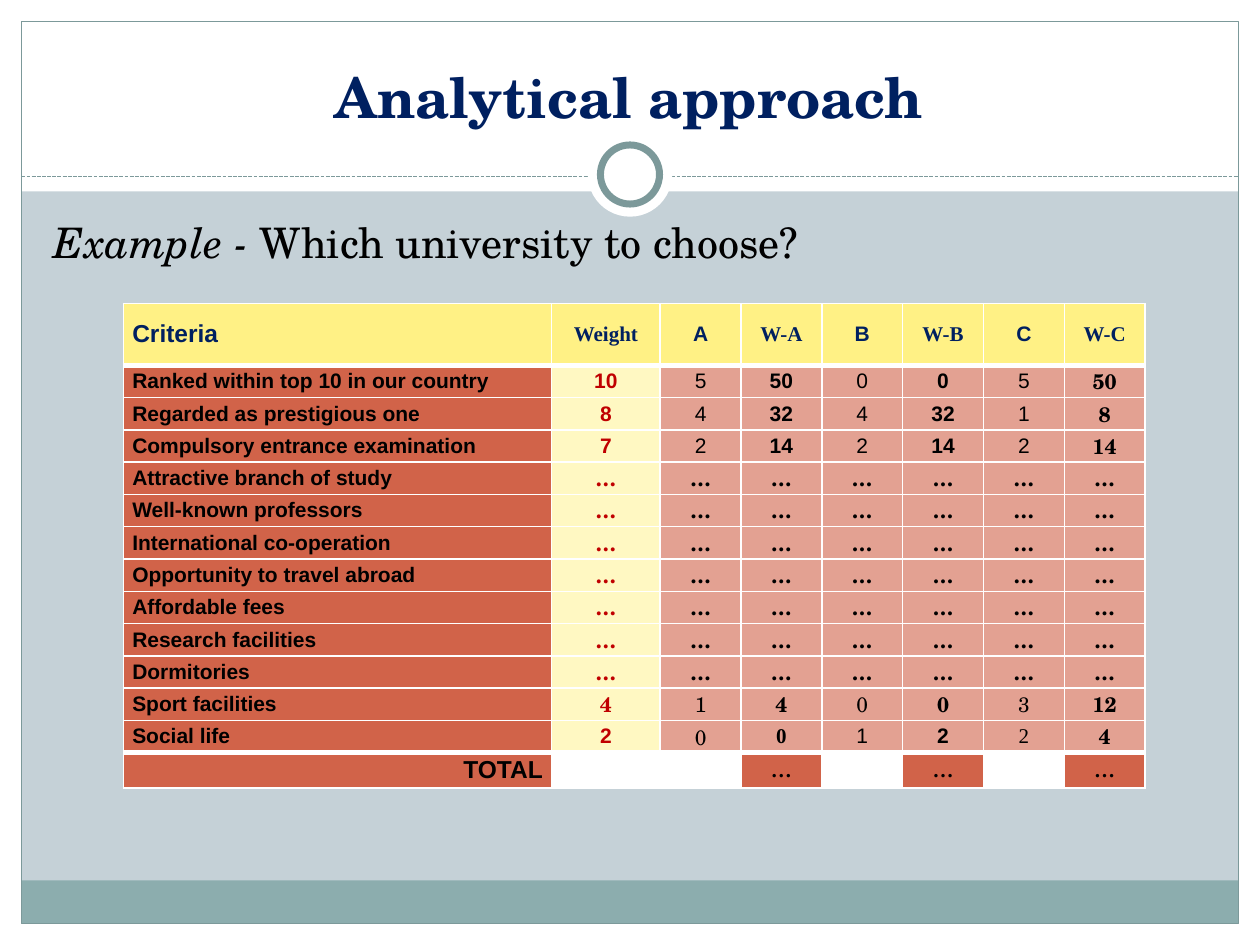
import pptx
import pptx.dml.color
import pptx.enum.dml
import pptx.enum.shapes
import pptx.enum.text
import pptx.oxml
import pptx.oxml.ns
import pptx.util
from lxml import etree

Pt = pptx.util.Pt
SHAPE = pptx.enum.shapes.MSO_SHAPE
ALIGN = pptx.enum.text.PP_ALIGN
ANCHOR = pptx.enum.text.MSO_ANCHOR
qn = pptx.oxml.ns.qn

WIDTH, HEIGHT = pptx.util.Inches(10), pptx.util.Inches(7.5)
SERIF, SANS, TIMES = "TeX Gyre Schola", "Arial", "Times New Roman"
WHITE, BLACK, NAVY, RED = "FFFFFF", "000000", "002060", "C00000"
BACKDROP, TEAL, SLATE = "C5D1D7", "8CADAE", "7C999A"
YELLOW, CREAM, BRICK, PINK = "FFF185", "FFF8C2", "D16349", "E3A192"

HEADERS = ["Criteria", "Weight", "A", "W-A", "B", "W-B", "C", "W-C"]
DOTS = ["…"] * 7
CRITERIA = [
    ("Ranked within top 10 in our country", ["10", "5", "50", "0", "0", "5", "50"]),
    ("Regarded as prestigious one", ["8", "4", "32", "4", "32", "1", "8"]),
    ("Compulsory entrance examination", ["7", "2", "14", "2", "14", "2", "14"]),
    ("Attractive branch of study", DOTS),
    ("Well-known professors", DOTS),
    ("International co-operation", DOTS),
    ("Opportunity to travel abroad", DOTS),
    ("Affordable fees", DOTS),
    ("Research facilities", DOTS),
    ("Dormitories", DOTS),
    ("Sport facilities", ["4", "1", "4", "0", "0", "3", "12"]),
    ("Social life", ["2", "0", "0", "1", "2", "2", "4"]),
]
SCORE_FONTS = [SANS] * 6 + [SERIF]
SOCIAL_FONTS = [SANS, SERIF, TIMES, SANS, SANS, TIMES, SERIF]
COLUMN_SHARES = [3.39, 0.86] + [0.64] * 6


def rgb(value):
    return pptx.dml.color.RGBColor.from_string(value)


def area(x, y, w, h):
    """Turn percentages of the slide into a box."""
    return [int(v * side / 100) for v, side in zip((x, y, w, h), (WIDTH, HEIGHT) * 2)]


def add_shape(s, kind, box, fill=None, line=None, weight=0.75):
    sp = s.shapes.add_shape(kind, *box)
    sp.shadow.inherit = False
    if fill:
        sp.fill.solid()
        sp.fill.fore_color.rgb = rgb(fill)
    else:
        sp.fill.background()
    if line:
        sp.line.color.rgb = rgb(line)
        sp.line.width = Pt(weight)
    else:
        sp.line.fill.background()


def style_run(r, size, font, color, bold=False, italic=False):
    r.font.size, r.font.name = Pt(size), font
    r.font.bold, r.font.italic = bold, italic
    r.font.color.rgb = rgb(color)


def add_margins(s, edge_x, edge_y, header):
    """Put white bands along the slide's four sides."""
    for band in ((0, 100 - edge_y, 100, edge_y), (0, 0, 100, header),
                 (0, 0, edge_x, 100), (100 - edge_x, 0, edge_x, 100)):
        add_shape(s, SHAPE.RECTANGLE, area(*band), WHITE)


def add_frame(s, box):
    x, y, w, h = box
    footer = int(h * 0.048)
    add_shape(s, SHAPE.RECTANGLE, (x, y + h - footer, w, footer), TEAL)
    add_shape(s, SHAPE.RECTANGLE, box, line=SLATE)
    rule_y = y + int(h * 0.172)
    rule = s.shapes.add_connector(pptx.enum.shapes.MSO_CONNECTOR.STRAIGHT,
                                  x, rule_y, x + w, rule_y)
    rule.line.color.rgb = rgb(SLATE)
    rule.line.width = Pt(0.75)
    rule.line.dash_style = pptx.enum.dml.MSO_LINE.SQUARE_DOT
    etree.SubElement(rule._element.spPr, qn("a:effectLst"))


def add_ring(s, box):
    x, y, w, h = box
    add_shape(s, SHAPE.OVAL, box, WHITE)
    inset = int(w * 0.15)
    add_shape(s, SHAPE.OVAL, (x + inset, y + inset, w - 2 * inset, h - 2 * inset),
              WHITE, SLATE, 4)


def add_title(s, box):
    tf = s.shapes.add_textbox(*box).text_frame
    tf.word_wrap = True
    tf.vertical_anchor = ANCHOR.BOTTOM
    p = tf.paragraphs[0]
    p.text = "Analytical approach"
    p.alignment = ALIGN.CENTER
    style_run(p.runs[0], 32, SERIF, NAVY, bold=True)


def add_question(s, box):
    tf = s.shapes.add_textbox(*box).text_frame
    tf.word_wrap = True
    p = tf.paragraphs[0]
    p.space_before = Pt(4.8)
    for text, italic in (("Example - ", True), ("Which university to choose?", False)):
        r = p.add_run()
        r.text = text
        style_run(r, 24, SERIF, BLACK, italic=italic)


def set_borders(cell, top, bottom):
    tc_pr = cell._tc.get_or_add_tcPr()
    for i, (side, weight) in enumerate((("L", 1), ("R", 1), ("T", top), ("B", bottom))):
        ln = etree.Element(qn("a:ln" + side), w=str(Pt(weight)))
        fill = etree.SubElement(ln, qn("a:solidFill"))
        etree.SubElement(fill, qn("a:srgbClr"), val=WHITE)
        tc_pr.insert(i, ln)


def fill_cell(cell, text, fill, size=12, font=SANS, color=BLACK, bold=True,
              align=ALIGN.CENTER, top=1, bottom=1):
    cell.margin_left = cell.margin_right = pptx.util.Inches(0.07)
    cell.margin_top = cell.margin_bottom = 0
    cell.vertical_anchor = ANCHOR.MIDDLE
    cell.fill.solid()
    cell.fill.fore_color.rgb = rgb(fill)
    set_borders(cell, top, bottom)
    p = cell.text_frame.paragraphs[0]
    p.alignment = align
    if text:
        p.text = text
        style_run(p.runs[0], size, font, color, bold)
    else:
        etree.SubElement(p._p, qn("a:endParaRPr"), sz=str(size * 100))


def score_fonts(name, scores):
    if name == "Social life":
        return SOCIAL_FONTS
    if scores is DOTS or name == "Sport facilities":
        return [SERIF] * 7
    return SCORE_FONTS


def add_score_table(s, box):
    x, y, w, h = box
    last = len(CRITERIA) + 1
    table = s.shapes.add_table(last + 1, len(HEADERS), *box).table
    for col, share in zip(table.columns, COLUMN_SHARES):
        col.width = int(w * share / sum(COLUMN_SHARES))
    head_h, total_h = int(h * 0.127), int(h * 0.073)
    for row in table.rows:
        row.height = (h - head_h - total_h) // len(CRITERIA)
    table.rows[0].height, table.rows[last].height = head_h, total_h

    for c, text in enumerate(HEADERS):
        fill_cell(table.cell(0, c), text, YELLOW, size=12 if c else 14,
                  font=TIMES if c % 2 else SANS, color=NAVY,
                  align=ALIGN.CENTER if c else ALIGN.LEFT, bottom=3)

    for i, (name, scores) in enumerate(CRITERIA, 1):
        top, bottom = 3 if i == 1 else 1, 3 if i == last - 1 else 1
        fill_cell(table.cell(i, 0), name, BRICK, align=ALIGN.LEFT, top=top, bottom=bottom)
        for c, (text, font) in enumerate(zip(scores, score_fonts(name, scores)), 1):
            fill_cell(table.cell(i, c), text, CREAM if c == 1 else PINK, font=font,
                      color=RED if c == 1 else BLACK, bold=c % 2 == 1 or text == "…",
                      top=top, bottom=bottom)

    fill_cell(table.cell(last, 0), "TOTAL", BRICK, size=14, align=ALIGN.RIGHT, top=3)
    for c in range(1, len(HEADERS)):
        weighted = HEADERS[c].startswith("W-")
        fill_cell(table.cell(last, c), "…" if weighted else "",
                  BRICK if weighted else WHITE, font=TIMES, top=3)


def main():
    prs = pptx.Presentation()
    prs.slide_width, prs.slide_height = WIDTH, HEIGHT
    s = prs.slides.add_slide(prs.slide_layouts[6])
    s.background.fill.solid()
    s.background.fill.fore_color.rgb = rgb(BACKDROP)
    add_margins(s, 1.7, 2.27, 20.27)
    add_frame(s, area(1.7, 2.27, 96.6, 95.46))
    add_ring(s, area(46.65, 14, 6.7, 8.93))
    add_title(s, area(3.3, 3.33, 93.3, 11.07))
    add_question(s, area(3.3, 22.27, 90.8, 66.67))
    add_score_table(s, area(9.8, 32.13, 81.1, 51.33))
    prs.save("out.pptx")


if __name__ == "__main__":
    main()
